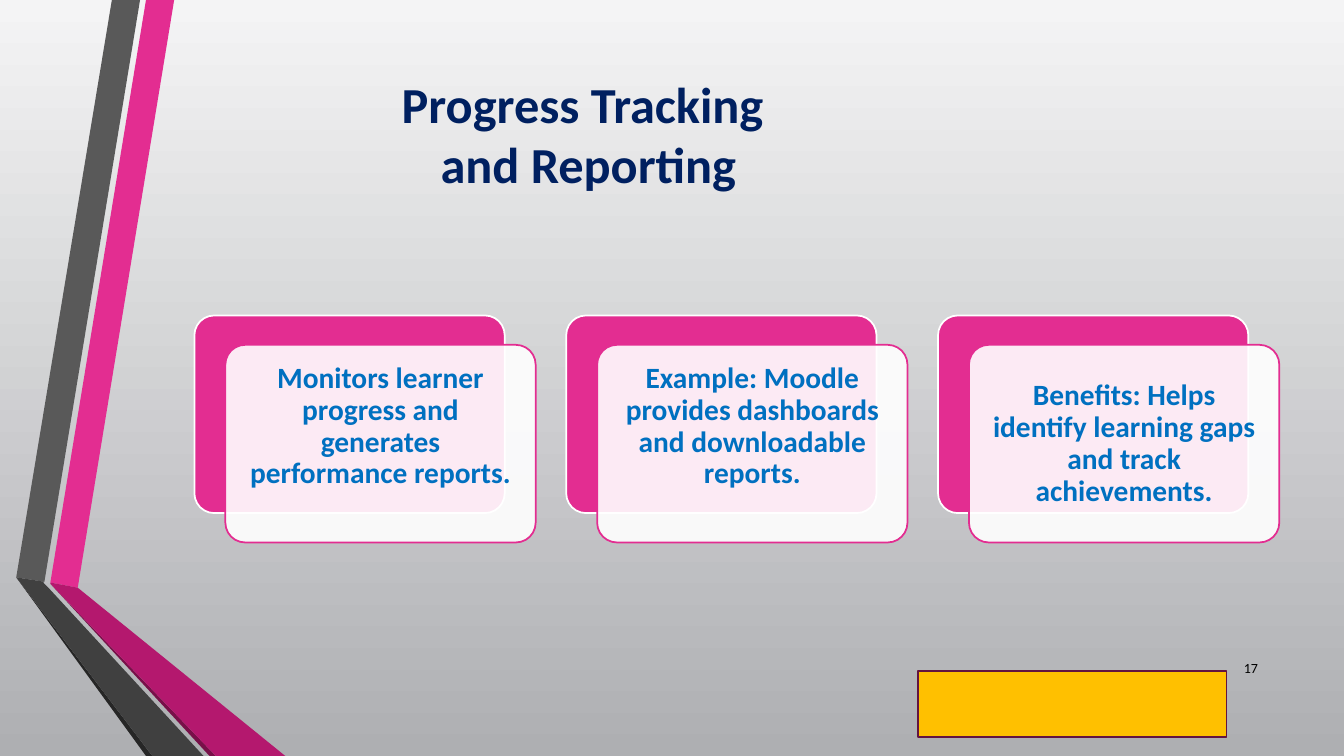
import lxml.etree
import pptx
import pptx.dml.color
import pptx.enum.shapes
import pptx.enum.text
import pptx.oxml.ns
import pptx.util

Cm = pptx.util.Cm
Pt = pptx.util.Pt
MSO_SHAPE = pptx.enum.shapes.MSO_SHAPE
PP_ALIGN = pptx.enum.text.PP_ALIGN

COLORS = {
    "backdrop_top": "F4F4F5",
    "backdrop_bottom": "AEAFB2",
    "pink": "E32D91",
    "pink_dark": "B4186E",
    "pink_shade": "781049",
    "gray": "595959",
    "gray_dark": "404040",
    "gray_shade": "262626",
    "gold": "FFC000",
    "plum": "631440",
    "navy": "002060",
    "blue": "0070C0",
    "white": "FFFFFF",
    "black": "000000",
}

# Folded ribbon down the left edge: colour and corners in cm
RIBBON = [
    ("pink", [(1.27, 14.68), (1.96, 14.81), (4.39, 0), (3.68, 0)]),
    ("gray", [(3.53, 0), (2.82, 0), (0.41, 14.55), (1.12, 14.66)]),
    ("gray_shade", [(0.41, 14.55), (3.68, 19.05), (3.84, 19.05)]),
    ("pink_shade", [(1.27, 14.71), (5.28, 19.05), (5.44, 19.05)]),
    ("pink_dark", [(1.27, 14.71), (5.44, 19.05), (7.19, 19.05),
                   (1.96, 14.81), (1.27, 14.68)]),
    ("gray_dark", [(5.13, 19.05), (1.22, 14.81), (1.09, 14.68),
                   (1.12, 14.66), (0.41, 14.55), (3.84, 19.05)]),
]

# Card text and its bottom inset in cm
CARDS = [
    ("Monitors learner progress and generates performance reports.", 1.1),
    ("Example: Moodle provides dashboards and downloadable reports.", 1.1),
    ("Benefits: Helps identify learning gaps and track achievements.", 0.23),
]
CARD_LEFT, CARD_TOP, CARD_PITCH = 4.9, 7.95, 9.37
CARD_WIDTH, CARD_HEIGHT = 7.82, 4.98


def rgb(name):
    return pptx.dml.color.RGBColor.from_string(COLORS[name])


def paint_background(slide):
    fill = slide.background.fill
    fill.gradient()
    fill.gradient_angle = 270
    for stop, name in zip(fill.gradient_stops, ("backdrop_top", "backdrop_bottom")):
        stop.color.rgb = rgb(name)
    fill.gradient_stops[0].position = 0
    fill.gradient_stops[1].position = 1


def add_ribbon_piece(slide, color, corners):
    points = [(Cm(x), Cm(y)) for x, y in corners]
    builder = slide.shapes.build_freeform(*points[0])
    builder.add_line_segments(points[1:], close=True)
    piece = builder.convert_to_shape()
    piece.shadow.inherit = False
    piece.fill.solid()
    piece.fill.fore_color.rgb = rgb(color)
    piece.line.fill.background()


def add_panel(slide, kind, left, top, width, height, fill, line, opacity=100):
    panel = slide.shapes.add_shape(kind, Cm(left), Cm(top), Cm(width), Cm(height))
    panel.shadow.inherit = False
    panel.fill.solid()
    panel.fill.fore_color.rgb = rgb(fill)
    panel.line.color.rgb = rgb(line)
    panel.line.width = Pt(1.25)
    if kind == MSO_SHAPE.ROUNDED_RECTANGLE:
        panel.adjustments[0] = 0.1
    if opacity < 100:
        qn = pptx.oxml.ns.qn
        color = panel.element.spPr.find(f"{qn('a:solidFill')}/{qn('a:srgbClr')}")
        lxml.etree.SubElement(color, qn("a:alpha"), val=str(opacity * 1000))


def add_text(slide, text, left, top, width, height, *, size, color, bold=False,
             align=PP_ALIGN.CENTER, spacing=1.0, insets=(0.25, 0.13, 0.25, 0.13)):
    """Add a middle-anchored text box; insets run left, top, right, bottom."""
    box = slide.shapes.add_textbox(Cm(left), Cm(top), Cm(width), Cm(height))
    frame = box.text_frame
    frame.word_wrap = True
    frame.vertical_anchor = pptx.enum.text.MSO_ANCHOR.MIDDLE
    (frame.margin_left, frame.margin_top,
     frame.margin_right, frame.margin_bottom) = map(Cm, insets)
    paragraph = frame.paragraphs[0]
    paragraph.text = text
    paragraph.alignment = align
    paragraph.line_spacing = spacing
    for run in paragraph.runs:
        run.font.name = "Calibri"
        run.font.size = Pt(size)
        run.font.bold = bold
        run.font.color.rgb = rgb(color)


def add_card(slide, left, text, bottom_inset):
    rounded = MSO_SHAPE.ROUNDED_RECTANGLE
    add_panel(slide, rounded, left, CARD_TOP, CARD_WIDTH, CARD_HEIGHT,
              "pink", "white")
    add_panel(slide, rounded, left + 0.78, CARD_TOP + 0.74, CARD_WIDTH, CARD_HEIGHT,
              "white", "pink", opacity=90)
    add_text(slide, text, left + 0.92, CARD_TOP + 0.89, 7.54, 4.7,
             size=21, color="blue", bold=True, spacing=0.9,
             insets=(0.23, 0.23, 0.23, bottom_inset))


def main():
    deck = pptx.Presentation()
    deck.slide_width, deck.slide_height = Cm(33.87), Cm(19.05)
    slide = deck.slides.add_slide(deck.slide_layouts[6])

    paint_background(slide)
    add_panel(slide, MSO_SHAPE.RECTANGLE, 23.14, 16.9, 7.77, 1.68, "gold", "plum")
    for color, corners in RIBBON:
        add_ribbon_piece(slide, color, corners)

    add_text(slide, "Progress Tracking \vand Reporting", 4.9, 1.91, 19.86, 2.9,
             size=36, color="navy", bold=True)
    add_text(slide, "17", 30.43, 16.31, 1.52, 1.02,
             size=10, color="black", align=PP_ALIGN.RIGHT)
    for index, (text, bottom_inset) in enumerate(CARDS):
        add_card(slide, CARD_LEFT + index * CARD_PITCH, text, bottom_inset)

    deck.save("out.pptx")


if __name__ == "__main__":
    main()
